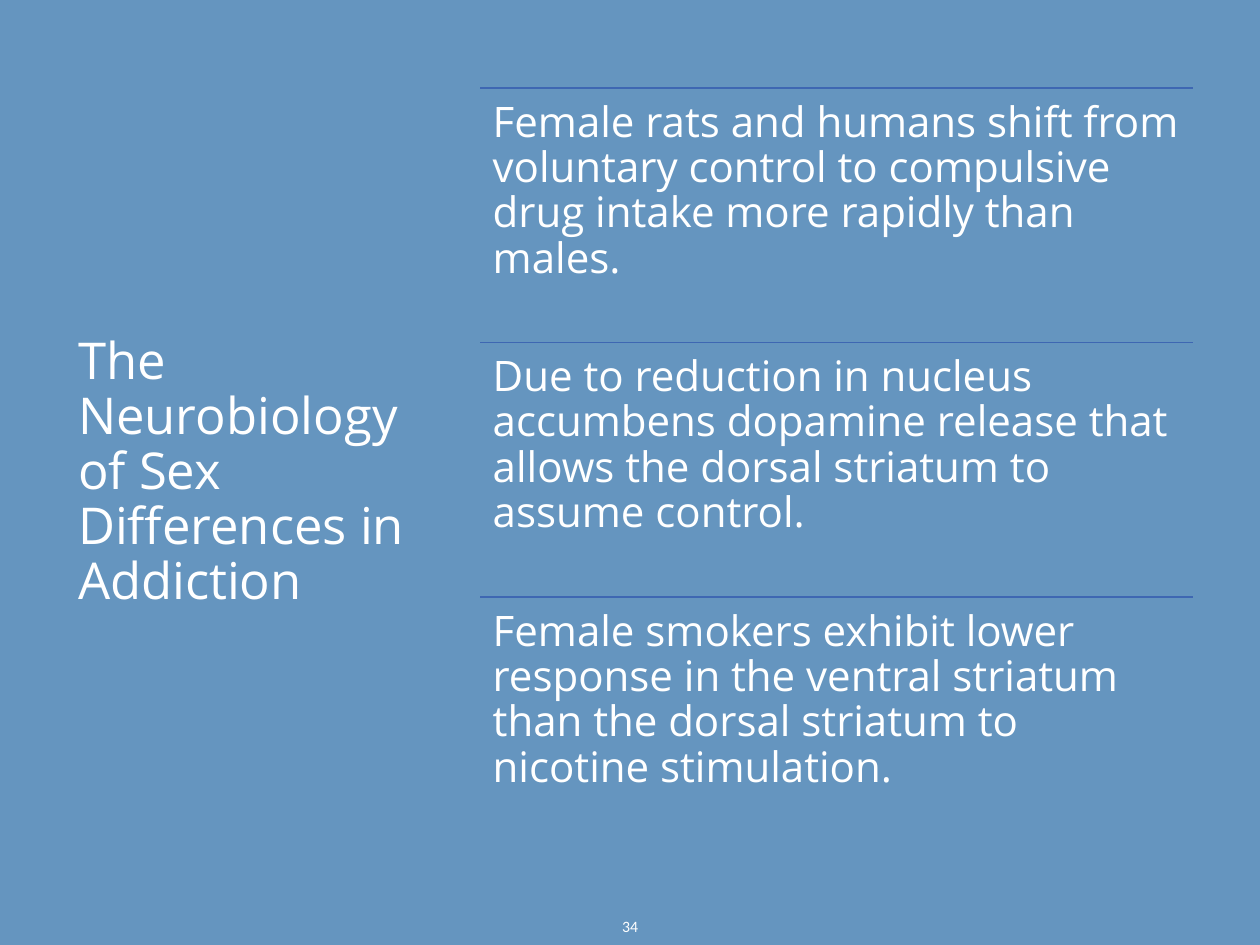
from lxml.etree import SubElement
from pptx import Presentation
from pptx.dml.color import RGBColor
from pptx.enum.shapes import MSO_CONNECTOR
from pptx.enum.text import MSO_ANCHOR, MSO_AUTO_SIZE, PP_ALIGN
from pptx.oxml.ns import qn
from pptx.util import Pt

TITLE = "The Neurobiology of Sex Differences in Addiction"
FINDINGS = [
    "Female rats and humans shift from voluntary control to compulsive drug intake more rapidly than males.",
    "Due to reduction in nucleus accumbens dopamine release that allows the dorsal striatum to assume control.",
    "Female smokers exhibit lower response in the ventral striatum than the dorsal striatum to nicotine stimulation.",
]
PAGE_NUMBER = "34"

BACKGROUND, RULE, TEXT = "6595BF", "3E67B2", "FFFFFF"
TOP = 50.4
FINDINGS_LEFT, FINDINGS_WIDTH, ROW_HEIGHT = 274.5, 407.5, 145.4


def colour(value):
    return RGBColor.from_string(value)


def write(shape, text, font, size, anchor, align=PP_ALIGN.LEFT, spacing=None, inset=3.6):
    frame = shape.text_frame
    frame.word_wrap = True
    frame.auto_size = MSO_AUTO_SIZE.NONE
    frame.vertical_anchor = anchor
    frame.margin_left = frame.margin_right = Pt(7.2)
    frame.margin_top = frame.margin_bottom = Pt(inset)
    frame.text = text
    paragraph = frame.paragraphs[0]
    paragraph.alignment = align
    paragraph.line_spacing = spacing
    paragraph.font.name = font
    paragraph.font.size = Pt(size)
    paragraph.font.color.rgb = colour(TEXT)


def add_finding(slide, text, top):
    left, width = FINDINGS_LEFT, FINDINGS_WIDTH
    rule = slide.shapes.add_connector(
        MSO_CONNECTOR.STRAIGHT, Pt(left), Pt(top), Pt(left + width), Pt(top))
    rule.line.color.rgb = colour(RULE)
    rule.line.width = Pt(1)
    SubElement(rule._element.spPr, qn("a:effectLst"))
    finding = slide.shapes.add_textbox(Pt(left), Pt(top), Pt(width), Pt(ROW_HEIGHT))
    write(finding, text, "Open Sans", 24, MSO_ANCHOR.TOP, spacing=0.9, inset=7.2)


def main():
    deck = Presentation()
    deck.slide_width, deck.slide_height = Pt(720), Pt(540)
    slide = deck.slides.add_slide(deck.slide_layouts[5])
    slide.background.fill.solid()
    slide.background.fill.fore_color.rgb = colour(BACKGROUND)

    title = slide.shapes.title
    title.left, title.top, title.width, title.height = Pt(37.4), Pt(TOP), Pt(201.6), Pt(440)
    write(title, TITLE, "Open Sans", 29, MSO_ANCHOR.MIDDLE, spacing=0.9)

    for row, finding in enumerate(FINDINGS):
        add_finding(slide, finding, TOP + row * ROW_HEIGHT)

    page_number = slide.shapes.add_textbox(Pt(279), Pt(515), Pt(162), Pt(28.8))
    write(page_number, PAGE_NUMBER, "Calibri", 9, MSO_ANCHOR.MIDDLE, PP_ALIGN.CENTER)

    deck.save("out.pptx")


if __name__ == "__main__":
    main()
